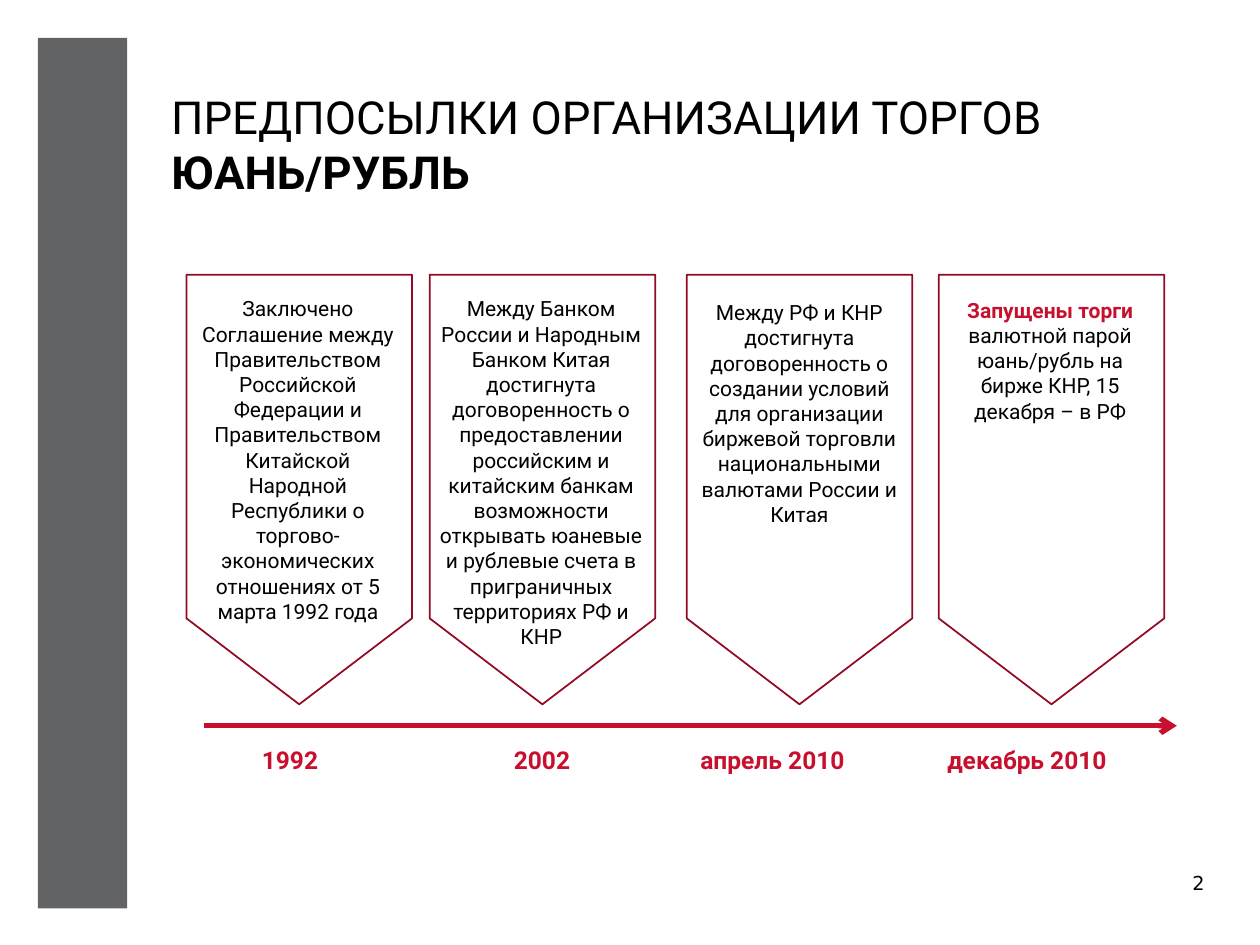
"""Build the timeline slide on the background to yuan/rouble trading."""
from dataclasses import dataclass

from lxml import etree
from pptx import Presentation, util as u
from pptx.dml.color import RGBColor
from pptx.enum import shapes, text
from pptx.oxml.ns import qn


@dataclass(frozen=True)
class Theme:
    """Colours, fonts and type sizes of the slide."""
    ink: str = "000000"
    accent: str = "C8102E"
    outline: str = "920924"
    band: str = "616365"
    font: str = "Roboto"
    number_font: str = "DejaVu Sans"
    title: float = 26
    body: float = 12
    date: float = 14
    number: float = 11


@dataclass(frozen=True)
class Area:
    """A rectangle in inches."""
    left: float
    top: float
    width: float
    height: float

    def lengths(self) -> list[u.Length]:
        """Return the rectangle as slide lengths."""
        return [u.Inches(v) for v in (self.left, self.top, self.width, self.height)]


@dataclass(frozen=True)
class Span:
    """A piece of text in one style."""
    words: str
    color: str = Theme.ink
    bold: bool = False


@dataclass(frozen=True)
class Stage:
    """A pennant on the timeline with its description."""
    left: float
    note: Area
    spans: tuple[Span, ...]


THEME = Theme()
PENNANT_TOP, PENNANT_WIDTH, PENNANT_HEIGHT = 2.18, 1.79, 3.41
DATES = ("1992", "2002", "апрель 2010", "декабрь 2010")
DATE_TABS = (2.0, 3.48, 5.44)
STAGES = (
    Stage(1.48, Area(1.46, 2.3, 1.81, 2.72), (
        Span("Заключено Соглашение между Правительством Российской Федерации и "
             "Правительством Китайской Народной Республики о торгово-экономических "
             "отношениях от 5 марта 1992 года"),)),
    Stage(3.41, Area(3.39, 2.3, 1.81, 2.52), (
        Span("Между Банком России и Народным Банком Китая достигнута договоренность "
             "о предоставлении российским и китайским банкам возможности открывать "
             "юаневые и рублевые счета в приграничных территориях РФ и КНР"),)),
    Stage(5.45, Area(5.46, 2.33, 1.77, 1.97), (
        Span("Между РФ и КНР достигнута договоренность о создании условий для "
             "организации биржевой торговли национальными валютами России и Китая"),)),
    Stage(7.45, Area(7.51, 2.31, 1.65, 1.25), (
        Span("Запущены торги ", THEME.accent, True),
        Span("валютной парой юань/рубль на бирже КНР, 15 декабря – в РФ"))),
)


def add_text(page, area: Area, spans: tuple[Span, ...], size: float,
             align=text.PP_ALIGN.LEFT, font: str = THEME.font):
    """Add a wrapped text box and return it."""
    box = page.shapes.add_textbox(*area.lengths())
    box.text_frame.word_wrap = True
    para = box.text_frame.paragraphs[0]
    para.alignment = align
    for item in spans:
        span = para.add_run()
        span.text = item.words
        span.font.name, span.font.size, span.font.bold = font, u.Pt(size), item.bold
        span.font.color.rgb = RGBColor.from_string(item.color)
    return box


def add_band(page) -> None:
    """Draw the grey band on the left."""
    band = page.shapes.add_shape(shapes.MSO_SHAPE.RECTANGLE,
                                 *Area(0.3, 0.3, 0.71, 6.91).lengths())
    band.shadow.inherit = False
    band.fill.solid()
    band.fill.fore_color.rgb = RGBColor.from_string(THEME.band)
    band.line.fill.background()


def add_stage(page, stage: Stage) -> None:
    """Draw one pennant and its description."""
    area = Area(stage.left, PENNANT_TOP, PENNANT_WIDTH, PENNANT_HEIGHT)
    pennant = page.shapes.add_shape(
        shapes.MSO_SHAPE.FLOWCHART_OFFPAGE_CONNECTOR, *area.lengths())
    pennant.shadow.inherit = False
    pennant.fill.background()
    pennant.line.color.rgb = RGBColor.from_string(THEME.outline)
    pennant.line.width = u.Pt(1)
    add_text(page, stage.note, stage.spans, THEME.body, text.PP_ALIGN.CENTER)


def add_axis(page) -> None:
    """Draw the time arrow."""
    axis = page.shapes.add_connector(
        shapes.MSO_CONNECTOR.STRAIGHT,
        u.Inches(1.62), u.Inches(5.76), u.Inches(9.34), u.Inches(5.76))
    axis.line.color.rgb = RGBColor.from_string(THEME.accent)
    axis.line.width = u.Pt(3)
    etree.SubElement(axis.line._get_or_add_ln(), qn("a:tailEnd"), type="arrow")
    etree.SubElement(axis._element.spPr, qn("a:effectLst"))


def add_dates(page) -> None:
    """Set the dates under the arrow on tab stops."""
    box = add_text(page, Area(1.98, 5.86, 7.7, 0.35),
                   (Span("\t".join(DATES), THEME.accent, True),), THEME.date)
    properties = box.text_frame.paragraphs[0]._p.get_or_add_pPr()
    stops = etree.SubElement(properties, qn("a:tabLst"))
    for stop in DATE_TABS:
        etree.SubElement(stops, qn("a:tab"), pos=str(u.Inches(stop)), algn="l")


def add_number(page) -> None:
    """Set the slide number."""
    box = add_text(page, Area(9.17, 6.77, 0.39, 0.39), (Span("2"),), THEME.number,
                   text.PP_ALIGN.RIGHT, THEME.number_font)
    box.text_frame.margin_left = box.text_frame.margin_right = 0
    box.text_frame.paragraphs[0].line_spacing = 1.5


def main() -> None:
    """Build and save the deck."""
    deck = Presentation()
    deck.slide_width, deck.slide_height = u.Inches(10), u.Inches(7.5)
    page = deck.slides.add_slide(deck.slide_layouts[6])
    add_band(page)
    add_number(page)
    add_text(page, Area(1.26, 0.66, 8.11, 0.84),
             (Span("ПРЕДПОСЫЛКИ ОРГАНИЗАЦИИ ТОРГОВ "), Span("ЮАНЬ/РУБЛЬ", bold=True)),
             THEME.title)
    add_axis(page)
    add_dates(page)
    for stage in STAGES:
        add_stage(page, stage)
    deck.save("out.pptx")


if __name__ == "__main__":
    main()
